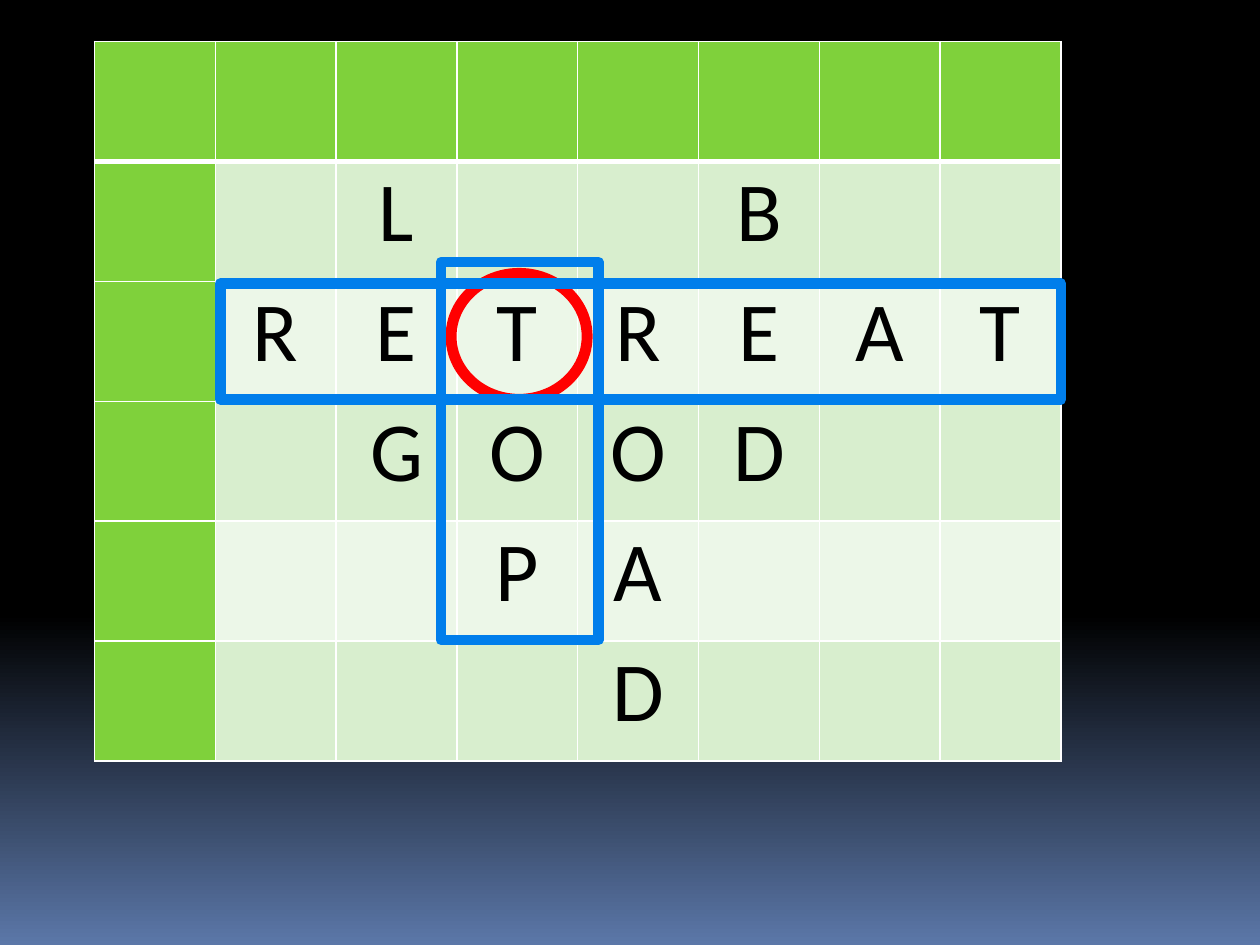
from copy import deepcopy
from dataclasses import dataclass

from lxml.etree import SubElement
from pptx import Presentation
from pptx.dml.color import RGBColor
from pptx.enum.shapes import MSO_SHAPE
from pptx.enum.text import PP_ALIGN
from pptx.oxml.ns import qn
from pptx.util import Inches, Pt

BLACK = RGBColor(0x00, 0x00, 0x00)
WHITE = RGBColor(0xFF, 0xFF, 0xFF)
NIGHT_BLUE = RGBColor(0x5B, 0x77, 0xA8)
GREEN = RGBColor(0x7F, 0xD1, 0x3B)
PALE_GREEN = RGBColor(0xD8, 0xEE, 0xCE)
LIGHT_GREEN = RGBColor(0xEC, 0xF7, 0xE8)
RED = RGBColor(0xFF, 0x00, 0x00)
BLUE = RGBColor(0x00, 0x7E, 0xEB)

LETTER_ROWS = [
    "........",
    "..L..B..",
    ".RETREAT",
    "..GOOD..",
    "...PA...",
    "....D...",
]


@dataclass(frozen=True)
class Marker:
    kind: MSO_SHAPE
    left: float
    top: float
    width: float
    height: float
    color: RGBColor
    weight: float


MARKERS = [
    Marker(MSO_SHAPE.OVAL, 3.58, 2.17, 1.08, 1, RED, 6.25),
    Marker(MSO_SHAPE.RECTANGLE, 3.5, 2.08, 1.25, 3, BLUE, 6),
    Marker(MSO_SHAPE.RECTANGLE, 1.75, 2.25, 6.67, 0.92, BLUE, 6),
]


def paint_background(slide) -> None:
    fill = slide.background.fill
    fill.gradient()
    fill.gradient_angle = 270
    first_stop = next(slide.element.iter(qn("a:gs")))
    first_stop.addnext(deepcopy(first_stop))
    colors = [(0, BLACK), (0.65, BLACK), (1, NIGHT_BLUE)]
    for stop, (position, color) in zip(fill.gradient_stops, colors):
        stop.position = position
        stop.color.rgb = color


def write_text(cell, text: str, *, size: float, color: RGBColor, font: str) -> None:
    cell.margin_left = cell.margin_right = Inches(0.07)
    cell.margin_top = cell.margin_bottom = 0
    para = cell.text_frame.paragraphs[0]
    para.alignment = PP_ALIGN.CENTER
    span = para.add_run()
    span.text = text
    span.font.size = Pt(size)
    span.font.name = font
    span.font.color.rgb = color


def add_borders(cell, top: float, bottom: float) -> None:
    properties = cell._tc.get_or_add_tcPr()
    for side, weight in (("L", 1), ("R", 1), ("T", top), ("B", bottom)):
        line = SubElement(properties, qn(f"a:ln{side}"), w=str(Pt(weight)))
        solid = SubElement(line, qn("a:solidFill"))
        SubElement(solid, qn("a:srgbClr"), val=str(WHITE))


def cell_color(row: int, column: int) -> RGBColor:
    if row == 0 or column == 0:
        return GREEN
    return PALE_GREEN if row % 2 else LIGHT_GREEN


def add_letter_grid(slide) -> None:
    rows, columns = len(LETTER_ROWS), len(LETTER_ROWS[0])
    frame = slide.shapes.add_table(
        rows, columns, Inches(0.75), Inches(0.33), Inches(7.67), Inches(5.71)
    )
    for row, letters in enumerate(LETTER_ROWS):
        for column, letter in enumerate(letters):
            cell = frame.table.cell(row, column)
            add_borders(cell, 3 if row == 1 else 1, 3 if row == 0 else 1)
            cell.fill.solid()
            cell.fill.fore_color.rgb = cell_color(row, column)
            if letter != ".":
                write_text(cell, letter, size=48, color=BLACK, font="Calibri")


def add_marker(slide, marker: Marker) -> None:
    shape = slide.shapes.add_shape(
        marker.kind,
        Inches(marker.left),
        Inches(marker.top),
        Inches(marker.width),
        Inches(marker.height),
    )
    shape.shadow.inherit = False
    shape.fill.background()
    shape.line.color.rgb = marker.color
    shape.line.width = Pt(marker.weight)


def main() -> None:
    deck = Presentation()
    deck.slide_width = Inches(10)
    deck.slide_height = Inches(7.5)
    page = deck.slides.add_slide(deck.slide_layouts[6])
    paint_background(page)
    add_letter_grid(page)
    for marker in MARKERS:
        add_marker(page, marker)
    deck.save("out.pptx")


if __name__ == "__main__":
    main()
